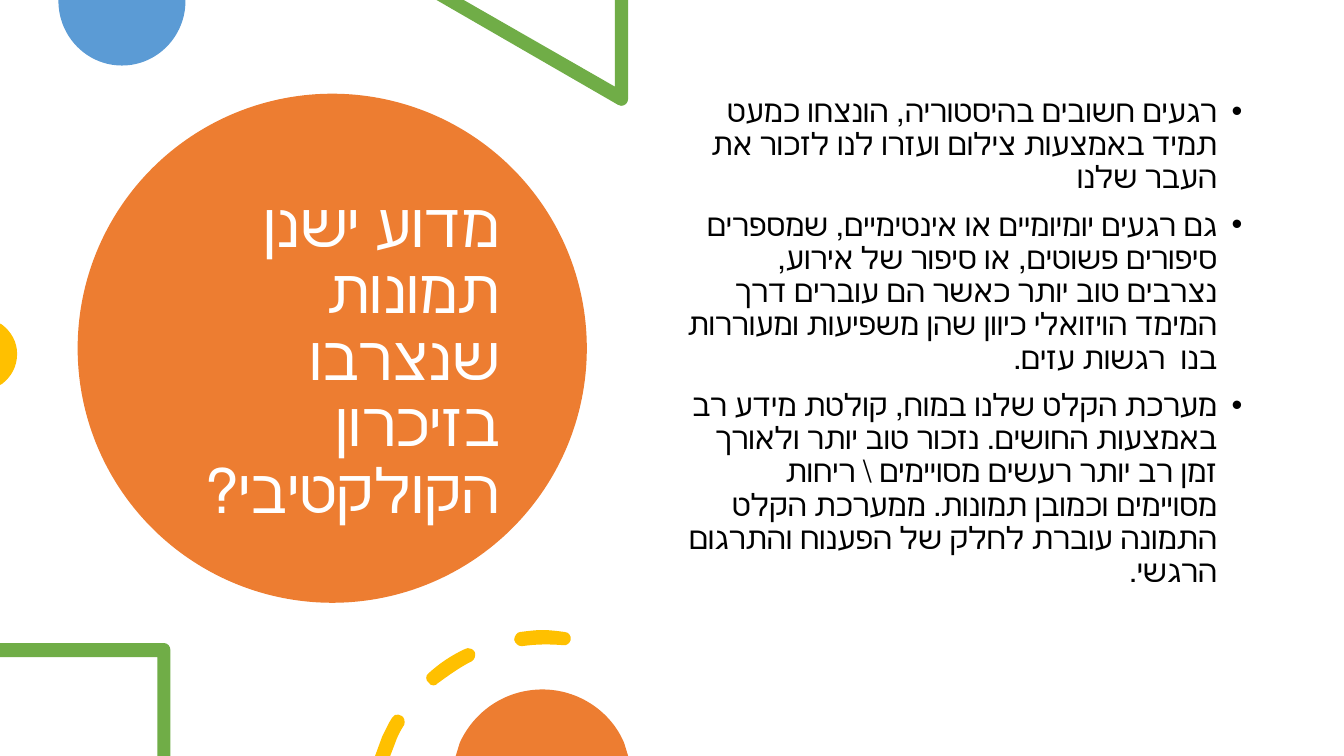
import pptx
import pptx.dml.color
import pptx.enum.shapes
import pptx.enum.text
import pptx.oxml
import pptx.oxml.ns
import pptx.util
from pptx.util import Inches

COLORS = {"orange": "ED7D31", "blue": "5B9BD5", "green": "70AD47",
          "yellow": "FFC000", "white": "FFFFFF", "black": "000000"}
NAMESPACE = pptx.oxml.ns.nsdecls("a")


def add_outline(contours, color):
    """Draw closed contours; pairs are corners, sextuples are Bezier curves."""
    builder = None
    for start, *segments in contours:
        x, y = Inches(start[0]), Inches(start[1])
        if builder is None:
            builder = slide.shapes.build_freeform(x, y)
        else:
            builder.move_to(x, y)
        builder.add_line_segments([(Inches(segment[-2]), Inches(segment[-1]))
                                   for segment in segments], close=True)
    shape = builder.convert_to_shape()
    paint(shape, color)

    # Turn the straight segments that have control points into curves
    all_segments = [segment for contour in contours for segment in contour[1:]]
    lines = list(shape._element.iter(pptx.oxml.ns.qn("a:lnTo")))
    for line, segment in zip(lines, all_segments):
        if len(segment) == 6:
            points = "".join(
                f'<a:pt x="{Inches(x) - shape.left}" y="{Inches(y) - shape.top}"/>'
                for x, y in zip(segment[::2], segment[1::2]))
            curve = pptx.oxml.parse_xml(f"<a:cubicBezTo {NAMESPACE}>{points}</a:cubicBezTo>")
            line.getparent().replace(line, curve)


def paint(shape, color):
    shape.shadow.inherit = False
    shape.fill.solid()
    shape.fill.fore_color.rgb = pptx.dml.color.RGBColor.from_string(COLORS[color])
    shape.line.fill.background()


presentation = pptx.Presentation()
presentation.slide_width = Inches(13.33)
presentation.slide_height = Inches(7.5)
slide = presentation.slides.add_slide(presentation.slide_layouts[5])

# Large circle behind the title
circle = slide.shapes.add_shape(pptx.enum.shapes.MSO_SHAPE.OVAL,
                                Inches(0.77), Inches(0.93), Inches(5.05), Inches(5.05))
paint(circle, "orange")

# Title, brought in front of the circle
title = slide.shapes.title
title.left, title.top = Inches(1.52), Inches(1.35)
title.width, title.height = Inches(3.54), Inches(4.45)
title.text_frame.text = "מדוע ישנן תמונות שנצרבו בזיכרון הקולקטיבי?"
title.text_frame.vertical_anchor = pptx.enum.text.MSO_ANCHOR.MIDDLE
circle._element.addnext(title._element)

# Decorations along the top and left edges
add_outline([[(1.84, 0), (0.58, 0), (0.58, 0.01), (0.58, 0.36, 0.86, 0.65, 1.21, 0.65),
              (1.56, 0.65, 1.84, 0.36, 1.84, 0.01)]], "blue")
add_outline([[(6.23, 0), (6.1, 0), (6.1, 0.86), (4.6, 0), (4.33, 0), (6.13, 1.04),
              (6.14, 1.05, 6.15, 1.05, 6.16, 1.05), (6.2, 1.05, 6.23, 1.02, 6.23, 0.98)]], "green")
add_outline([[(0, 3.21), (0, 3.82), (0.02, 3.81), (0.11, 3.74, 0.17, 3.64, 0.17, 3.51),
              (0.17, 3.39, 0.11, 3.29, 0.02, 3.22)]], "yellow")

# Bulleted text
body = slide.shapes.add_textbox(Inches(6.67), Inches(0.9), Inches(5.75), Inches(5.35))
body.text_frame.text = "\n".join([
    "רגעים חשובים בהיסטוריה, הונצחו כמעט תמיד באמצעות צילום ועזרו לנו לזכור את העבר שלנו",
    "גם רגעים יומיומיים או אינטימיים, שמספרים סיפורים פשוטים, או סיפור של אירוע, "
    "נצרבים טוב יותר כאשר הם עוברים דרך המימד הויזואלי כיוון שהן משפיעות ומעוררות "
    "בנו  רגשות עזים.",
    "מערכת הקלט שלנו במוח, קולטת מידע רב באמצעות החושים. נזכור טוב יותר ולאורך "
    "זמן רב יותר רעשים מסויימים \\ ריחות מסויימים וכמובן תמונות. ממערכת הקלט "
    "התמונה עוברת לחלק של הפענוח והתרגום הרגשי.",
])
for index, paragraph in enumerate(body.text_frame.paragraphs):
    paragraph.space_before = pptx.util.Pt(10 if index else 0)
    properties = paragraph._p.get_or_add_pPr()
    properties.set("marL", str(Inches(0.25)))
    properties.set("indent", str(-Inches(0.25)))
    for bullet in ('buFont {} typeface="Arial"', 'buChar {} char="•"'):
        properties.append(pptx.oxml.parse_xml(f"<a:{bullet.format(NAMESPACE)}/>"))

# Right-to-left paragraphs and fonts
for shape, size, font_name, color in ((title, 44, "Calibri", "white"),
                                      (body, 22, "Arial", "black")):
    shape.text_frame.word_wrap = True
    shape.text_frame.auto_size = pptx.enum.text.MSO_AUTO_SIZE.NONE
    for paragraph in shape.text_frame.paragraphs:
        paragraph.alignment = pptx.enum.text.PP_ALIGN.RIGHT
        paragraph.line_spacing = 0.9
        paragraph._p.get_or_add_pPr().set("rtl", "1")
        paragraph.font.size = pptx.util.Pt(size)
        paragraph.font.name = font_name
        paragraph.font.color.rgb = pptx.dml.color.RGBColor.from_string(COLORS[color])

# Decorations along the bottom edge
add_outline([[(1.63, 6.38), (0, 6.38), (0, 6.52), (1.56, 6.52), (1.56, 7.5), (1.69, 7.5),
              (1.69, 6.45), (1.69, 6.41, 1.66, 6.38, 1.63, 6.38)]], "green")
dashes = [
    [(3.95, 7.09), (3.93, 7.08, 3.9, 7.1, 3.89, 7.12), (3.85, 7.18, 3.82, 7.25, 3.79, 7.31),
     (3.72, 7.5), (3.87, 7.5), (3.92, 7.37), (3.94, 7.31, 3.97, 7.25, 4.01, 7.19),
     (4.02, 7.16, 4.01, 7.11, 3.98, 7.1), (3.97, 7.09, 3.96, 7.09, 3.95, 7.09)],
    [(4.64, 6.43), (4.63, 6.43, 4.62, 6.43, 4.61, 6.44), (4.48, 6.5, 4.36, 6.58, 4.25, 6.68),
     (4.22, 6.7, 4.22, 6.75, 4.25, 6.77), (4.26, 6.79, 4.28, 6.8, 4.3, 6.8),
     (4.32, 6.8, 4.33, 6.79, 4.34, 6.78), (4.45, 6.7, 4.56, 6.62, 4.68, 6.56),
     (4.71, 6.54, 4.72, 6.5, 4.71, 6.47), (4.69, 6.44, 4.67, 6.43, 4.64, 6.43)],
    [(5.38, 6.25), (5.31, 6.25, 5.24, 6.26, 5.16, 6.27), (5.13, 6.27, 5.1, 6.31, 5.1, 6.35),
     (5.11, 6.38, 5.14, 6.41, 5.17, 6.41), (5.18, 6.41), (5.32, 6.39, 5.45, 6.39, 5.58, 6.4),
     (5.62, 6.41, 5.65, 6.38, 5.66, 6.35), (5.67, 6.31, 5.64, 6.27, 5.6, 6.27),
     (5.53, 6.26, 5.45, 6.25, 5.38, 6.25)],
]
add_outline(dashes, "yellow")
add_outline([[(5.38, 6.84), (5.01, 6.84, 4.7, 7.06, 4.56, 7.37), (4.52, 7.5), (6.23, 7.5),
              (6.19, 7.37), (6.06, 7.06, 5.74, 6.84, 5.38, 6.84)]], "orange")

presentation.save("out.pptx")
